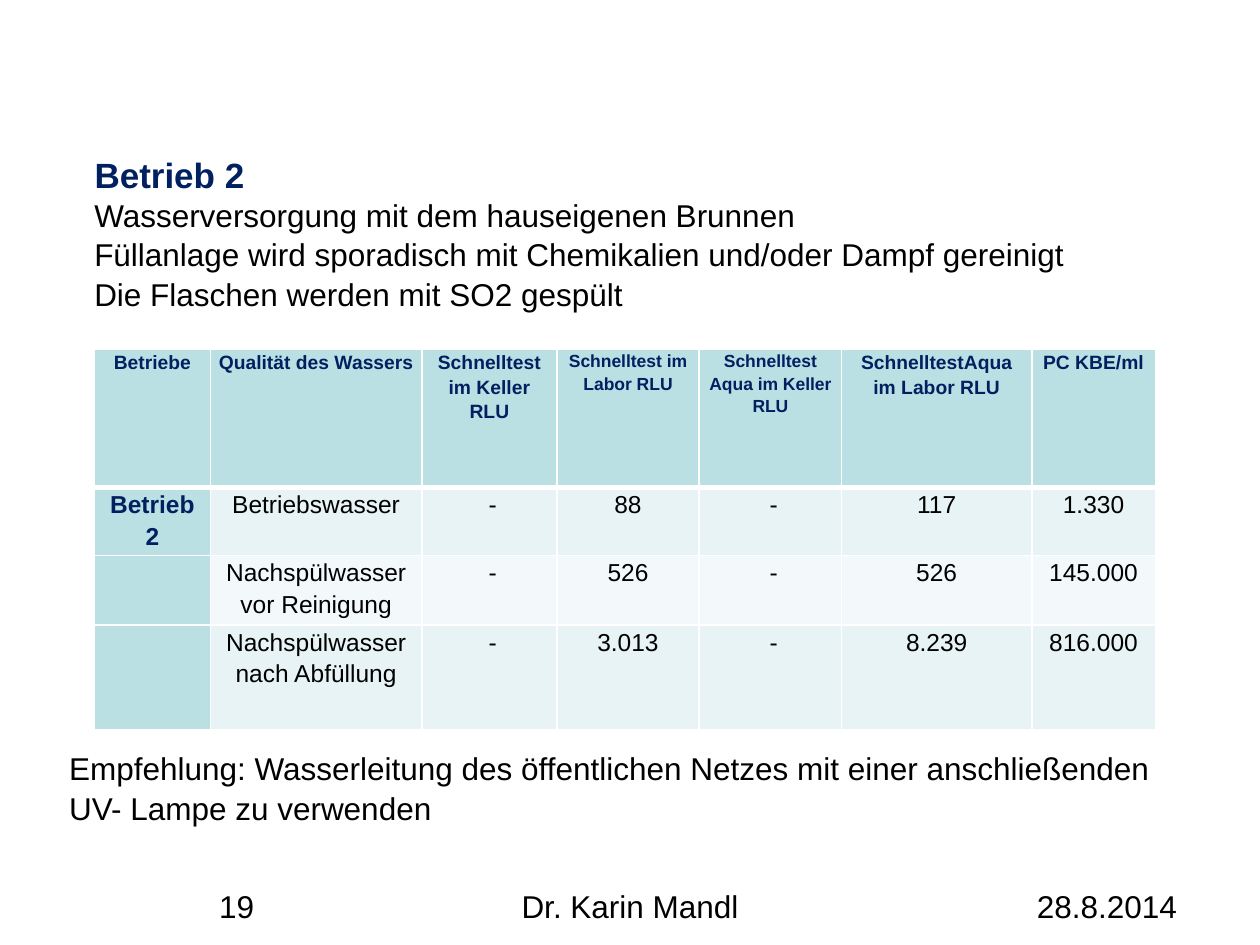
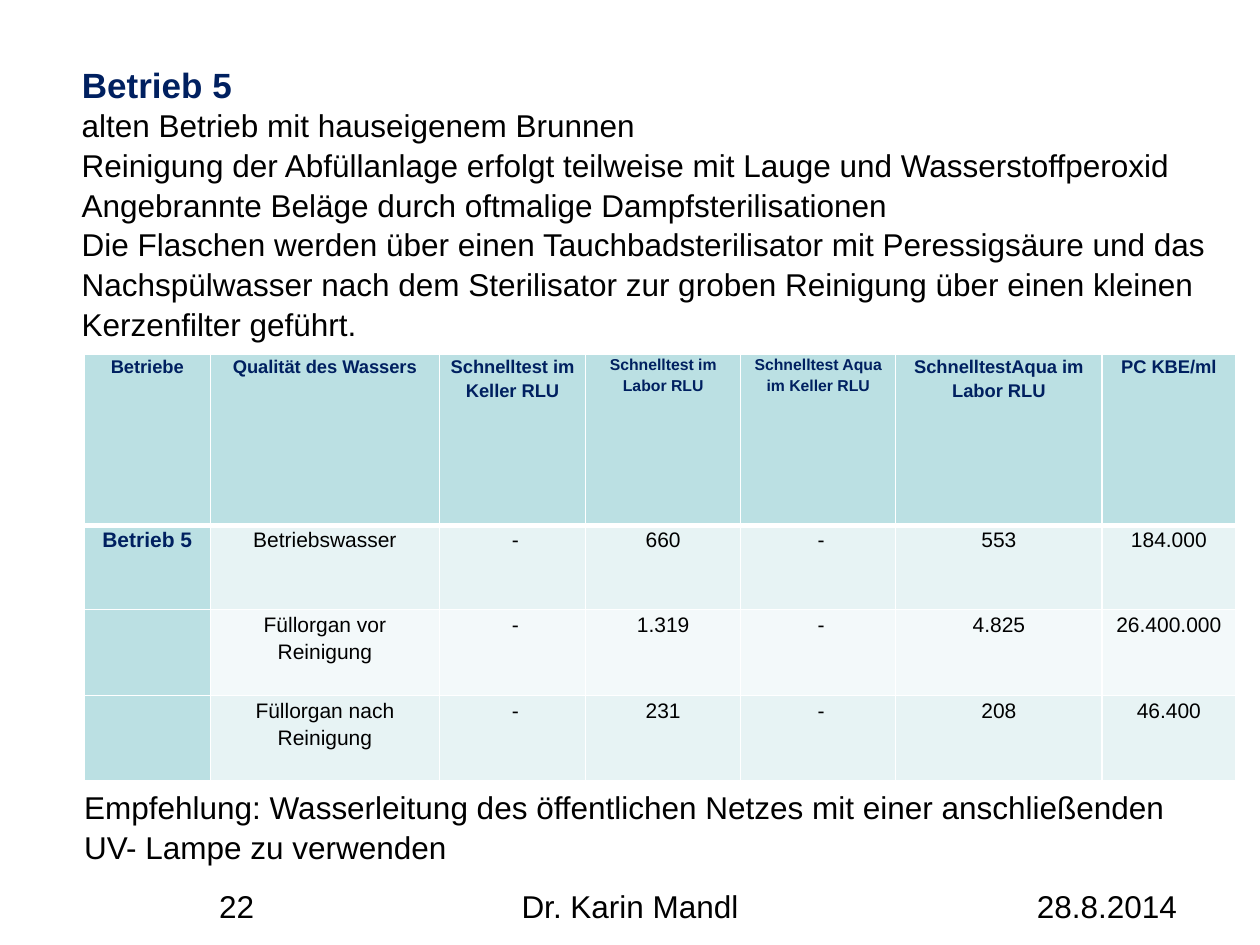
import pptx
import pptx.util
import pptx.dml.color
import pptx.enum.text
import lxml.etree
from pptx.oxml.ns import qn

Pt = pptx.util.Pt
ALIGN = pptx.enum.text.PP_ALIGN
COLORS = {"navy": "002060", "black": "000000", "white": "FFFFFF",
          "header": "BBE0E3", "odd_row": "E7F3F4", "even_row": "F3F9FA"}
FONT = "Arial"
TITLE_HEIGHT = 28
HEADERS = ["Betriebe", "Qualität des Wassers", "Schnelltest im Keller RLU",
           "Schnelltest im Labor RLU", "Schnelltest Aqua im Keller RLU",
           "SchnelltestAqua im Labor RLU", "PC KBE/ml"]
SMALL_HEADERS = (3, 4)
ADVICE = ("Empfehlung: Wasserleitung des öffentlichen Netzes mit einer "
          "anschließenden UV- Lampe zu verwenden")

# Footer fields: left and width
FOOTER_TOP, FOOTER_HEIGHT = 502.5, 37.5
DATE_FIELD, AUTHOR_FIELD, NUMBER_FIELD = (564.5, 136), (184.3, 351.4), (105, 60.5)

SLIDES = [
    {
        "number": "19",
        "title": "Betrieb 2",
        "intro_box": (46.8, 82.8, 674.6, 118.8),
        "intro": ["Wasserversorgung mit dem hauseigenen Brunnen",
                  "Füllanlage wird sporadisch mit Chemikalien und/oder Dampf gereinigt",
                  "Die Flaschen werden mit SO2 gespült"],
        "advice_box": (32.4, 423.4, 640.8, 51),
        "table_origin": (54, 199.4),
        "columns": [66.2, 121, 77, 81.4, 81.4, 108.7, 70.6],
        "rows": [79.2, 38.9, 39.6, 59.8],
        "sizes": {"header": 11, "small_header": 10, "body": 14},
        "values": [
            ["Betrieb 2", "Betriebswasser", " -", "88", " -", "117", "1.330"],
            ["", "Nachspülwasser vor Reinigung", " -", "526", " -", "526", "145.000"],
            ["", "Nachspülwasser nach Abfüllung", " -", "3.013", " -", "8.239", "816.000"],
        ],
    },
    {
        "number": "22",
        "title": "Betrieb 5",
        "intro_box": (39.6, 31.7, 680.4, 162.7),
        "intro": ["alten Betrieb mit hauseigenem Brunnen",
                  "Reinigung der Abfüllanlage erfolgt teilweise mit Lauge und "
                  "Wasserstoffperoxid Angebrannte Beläge durch oftmalige "
                  "Dampfsterilisationen",
                  "Die Flaschen werden über einen Tauchbadsterilisator mit "
                  "Peressigsäure und das Nachspülwasser nach dem Sterilisator zur "
                  "groben Reinigung über einen kleinen Kerzenfilter geführt."],
        "advice_box": (41, 445.7, 658.8, 51),
        "table_origin": (48.2, 202.3),
        "columns": [72, 131, 83.5, 88.6, 88.6, 118, 76.3],
        "rows": [97.9, 48.2, 49, 49],
        "sizes": {"header": 10.5, "small_header": 9, "body": 12},
        "values": [
            ["Betrieb 5", "Betriebswasser", " -", "660", " -", "553", "184.000"],
            ["", "Füllorgan vor Reinigung", " -", "1.319", " -", "4.825", "26.400.000"],
            ["", "Füllorgan nach Reinigung", " -", "231", " -", "208", "46.400"],
        ],
    },
]


def write_text(text_frame, paragraphs, size=18, color="black", bold=False,
               align=ALIGN.LEFT, spacing=1.05):
    text_frame.word_wrap = True
    text_frame.text = "\n".join(paragraphs)
    for paragraph in text_frame.paragraphs:
        paragraph.alignment = align
        paragraph.line_spacing = spacing
        paragraph.font.size = Pt(size)
        for run in paragraph.runs:
            run.font.name = FONT
            run.font.size = Pt(size)
            run.font.bold = bold
            run.font.color.rgb = pptx.dml.color.RGBColor.from_string(COLORS[color])


def set_borders(cell, widths):
    """Draw white borders; widths maps L, R, T, B, in that order, to points."""
    properties = cell._tc.get_or_add_tcPr()
    for position, (side, width) in enumerate(widths.items()):
        line = lxml.etree.Element(qn(f"a:ln{side}"), w=str(Pt(width)))
        fill = lxml.etree.SubElement(line, qn("a:solidFill"))
        lxml.etree.SubElement(fill, qn("a:srgbClr"), val=COLORS["white"])
        properties.insert(position, line)


presentation = pptx.Presentation()
presentation.slide_width = Pt(720)
presentation.slide_height = Pt(540)

for content in SLIDES:
    slide = presentation.slides.add_slide(presentation.slide_layouts[5])

    left, top, width, height = content["intro_box"]
    title = slide.shapes.title
    title.left, title.top = Pt(left), Pt(top)
    title.width, title.height = Pt(width), Pt(TITLE_HEIGHT)
    title.text_frame.vertical_anchor = pptx.enum.text.MSO_ANCHOR.TOP
    title.text_frame.auto_size = pptx.enum.text.MSO_AUTO_SIZE.NONE
    title.text_frame.margin_bottom = 0
    write_text(title.text_frame, [content["title"]], 20, "navy", True)

    intro = slide.shapes.add_textbox(Pt(left), Pt(top + TITLE_HEIGHT),
                                     Pt(width), Pt(height - TITLE_HEIGHT))
    intro.text_frame.margin_top = 0
    write_text(intro.text_frame, content["intro"])

    advice = slide.shapes.add_textbox(*map(Pt, content["advice_box"]))
    write_text(advice.text_frame, [ADVICE])

    for text, (left, width) in [("28.8.2014", DATE_FIELD),
                                ("Dr. Karin Mandl", AUTHOR_FIELD),
                                (content["number"], NUMBER_FIELD)]:
        footer = slide.shapes.add_textbox(Pt(left), Pt(FOOTER_TOP),
                                          Pt(width), Pt(FOOTER_HEIGHT))
        write_text(footer.text_frame, [text], align=ALIGN.CENTER)

    left, top = content["table_origin"]
    columns, rows, sizes = content["columns"], content["rows"], content["sizes"]
    table = slide.shapes.add_table(len(rows), len(columns), Pt(left), Pt(top),
                                   Pt(sum(columns)), Pt(sum(rows))).table
    for column, width in zip(table.columns, columns):
        column.width = Pt(width)
    for row, height in zip(table.rows, rows):
        row.height = Pt(height)

    for row_index, texts in enumerate([HEADERS] + content["values"]):
        for column_index, text in enumerate(texts):
            cell = table.cell(row_index, column_index)
            is_heading = row_index == 0 or column_index == 0
            if row_index > 0:
                size = sizes["body"]
            elif column_index in SMALL_HEADERS:
                size = sizes["small_header"]
            else:
                size = sizes["header"]
            if is_heading:
                fill = "header"
            else:
                fill = "odd_row" if row_index % 2 else "even_row"

            cell.margin_left = cell.margin_right = Pt(3.6)
            cell.margin_top = cell.margin_bottom = 0
            cell.fill.solid()
            cell.fill.fore_color.rgb = pptx.dml.color.RGBColor.from_string(COLORS[fill])
            write_text(cell.text_frame, [text], size,
                       "navy" if is_heading else "black", is_heading,
                       ALIGN.CENTER, 1.15)
            set_borders(cell, {"L": 1, "R": 1,
                               "T": 3 if row_index == 1 else 1,
                               "B": 3 if row_index == 0 else 1})

presentation.save("out.pptx")
